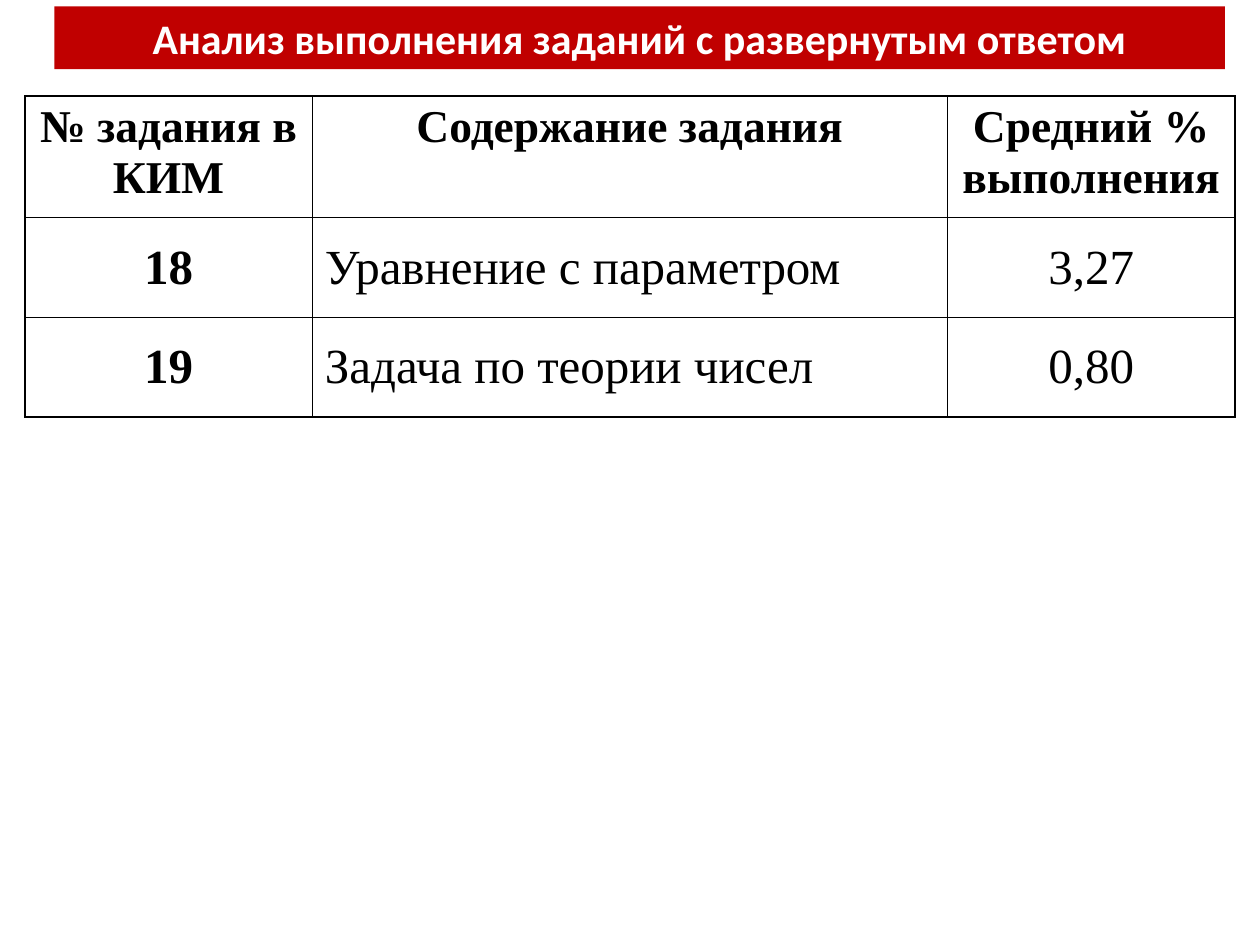
from lxml.etree import SubElement
from pptx import Presentation
from pptx.dml.color import RGBColor
from pptx.enum.shapes import MSO_SHAPE
from pptx.enum.text import MSO_ANCHOR, MSO_AUTO_SIZE, PP_ALIGN
from pptx.oxml.ns import qn
from pptx.util import Pt

TITLE = "Анализ выполнения заданий с развернутым ответом"
ROWS = [
    ("№ задания в КИМ", "Содержание задания", "Средний % выполнения"),
    ("18", "Уравнение с параметром", "3,27"),
    ("19", "Задача по теории чисел", "0,80"),
]
COLUMN_WIDTHS = (164.25, 363, 164.25)
ROW_HEIGHTS = (69, 57, 57)


def color(value):
    """Turn a hex string into a colour."""
    return RGBColor.from_string(value)


def write(text_frame, text, font_name, size, font_color, bold, alignment):
    """Put one formatted paragraph into a text frame."""
    text_frame.text = text
    paragraph = text_frame.paragraphs[0]
    paragraph.alignment = alignment
    font = paragraph.runs[0].font
    font.name, font.size, font.bold = font_name, Pt(size), bold
    font.color.rgb = color(font_color)
    return paragraph


def add_borders(cell, line_color, width):
    """Draw a solid line on all four sides of a cell."""
    properties = cell._tc.get_or_add_tcPr()
    for side in ("lnL", "lnR", "lnT", "lnB"):
        line = SubElement(properties, qn(f"a:{side}"), w=str(Pt(width)))
        fill = SubElement(line, qn("a:solidFill"))
        SubElement(fill, qn("a:srgbClr"), val=line_color)


def add_title_bar(slide, left, top, width, height):
    """Add the red bar with the slide title."""
    bar = slide.shapes.add_shape(
        MSO_SHAPE.RECTANGLE, Pt(left), Pt(top), Pt(width), Pt(height))
    bar.shadow.inherit = False
    bar.fill.solid()
    bar.fill.fore_color.rgb = color("C00000")
    bar.line.fill.background()
    text_frame = bar.text_frame
    text_frame.word_wrap = True
    text_frame.auto_size = MSO_AUTO_SIZE.SHAPE_TO_FIT_TEXT
    text_frame.vertical_anchor = MSO_ANCHOR.TOP
    paragraph = write(text_frame, TITLE, "Calibri", 24, "FFFFFF", True, PP_ALIGN.CENTER)
    paragraph.space_after = Pt(6)


def add_results_table(slide, left, top):
    """Add the table of tasks and their average results."""
    table = slide.shapes.add_table(
        len(ROWS), len(COLUMN_WIDTHS), Pt(left), Pt(top),
        Pt(sum(COLUMN_WIDTHS)), Pt(sum(ROW_HEIGHTS))).table
    table.first_row = table.horz_banding = False
    for column, width in zip(table.columns, COLUMN_WIDTHS):
        column.width = Pt(width)
    for row_index, (row, height) in enumerate(zip(table.rows, ROW_HEIGHTS)):
        row.height = Pt(height)
        is_header = row_index == 0
        for column_index, text in enumerate(ROWS[row_index]):
            cell = table.cell(row_index, column_index)
            add_borders(cell, "000000", 1)
            cell.fill.background()
            is_content = column_index == 1 and not is_header
            write(cell.text_frame, text, "Times New Roman", 26 if is_header else 28,
                  "000000", is_header or column_index == 0,
                  PP_ALIGN.LEFT if is_content else PP_ALIGN.CENTER)
            cell.vertical_anchor = MSO_ANCHOR.TOP if is_header else MSO_ANCHOR.MIDDLE
            if column_index == 2 and not is_header:
                cell.margin_left = cell.margin_right = Pt(3)
                cell.margin_top = cell.margin_bottom = Pt(0)


def main():
    """Build and save the slide."""
    presentation = Presentation()
    presentation.slide_width, presentation.slide_height = Pt(720), Pt(540)
    slide = presentation.slides.add_slide(presentation.slide_layouts[6])
    add_title_bar(slide, 31, 3.6, 669, 36)
    add_results_table(slide, 14.25, 54.75)
    presentation.save("out.pptx")


if __name__ == "__main__":
    main()
